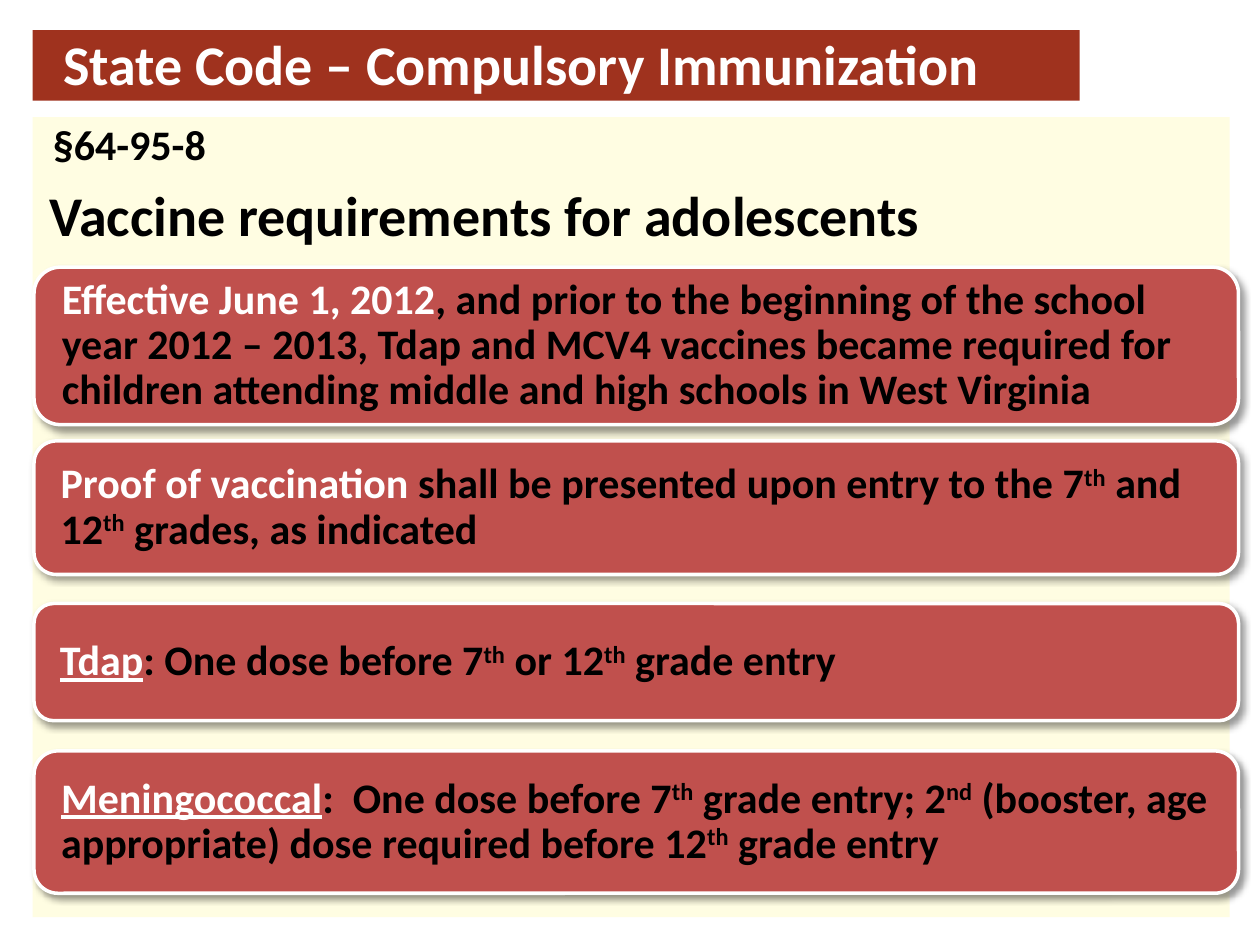
from dataclasses import dataclass

import pptx
import pptx.dml.color
import pptx.enum.shapes
import pptx.enum.text
import pptx.oxml
import pptx.oxml.ns
import pptx.util

COLORS = {
    "panel": "FFFDE2",
    "banner": "9F321E",
    "card": "C0504D",
    "light": "FFFFFF",
    "dark": "000000",
}
FONT = "Calibri"
WIDTH, HEIGHT = pptx.util.Inches(10), pptx.util.Inches(7.5)
SHAPES = pptx.enum.shapes.MSO_SHAPE

CARD_LEFT, CARD_WIDTH = 0.027, 0.956
CARD_SHADOW = (
    f'<a:effectLst {pptx.oxml.ns.nsdecls("a")}>'
    '<a:outerShdw blurRad="50800" dist="38100" dir="2700000" rotWithShape="0">'
    '<a:srgbClr val="000000"><a:alpha val="40000"/></a:srgbClr>'
    "</a:outerShdw></a:effectLst>"
)


@dataclass
class Requirement:
    """One card; top and height are shares of the slide, ^ encloses superscripts."""
    top: float
    height: float
    lead: str
    detail: str
    underlined: bool = False


REQUIREMENTS = [
    Requirement(2.12 / 7.5, 1.25 / 7.5, "Effective June 1, 2012",
                ", and prior to the beginning of the school year 2012 – 2013, "
                "Tdap and MCV4 vaccines became required for children attending "
                "middle and high schools in West Virginia"),
    Requirement(3.5 / 7.5, 1.06 / 7.5, "Proof of vaccination ",
                "shall be presented upon entry to the 7^th^ and 12^th^ grades, "
                "as indicated"),
    Requirement(4.79 / 7.5, 0.93 / 7.5, "Tdap",
                ": One dose before 7^th^ or 12^th^ grade entry", True),
    Requirement(5.96 / 7.5, 1.13 / 7.5, "Meningococcal",
                ":  One dose before 7^th^ grade entry; 2^nd^ (booster, age "
                "appropriate) dose required before 12^th^ grade entry", True),
]


def rgb(name: str) -> pptx.dml.color.RGBColor:
    return pptx.dml.color.RGBColor.from_string(COLORS[name])


def area(left: float, top: float, width: float, height: float) -> tuple:
    """Turn shares of the slide into lengths."""
    return (round(left * WIDTH), round(top * HEIGHT),
            round(width * WIDTH), round(height * HEIGHT))


def add_block(slide, kind, place: tuple, color: str):
    block = slide.shapes.add_shape(kind, *place)
    block.shadow.inherit = False
    block.fill.solid()
    block.fill.fore_color.rgb = rgb(color)
    block.line.fill.background()
    return block


def set_frame(frame, anchor, side: float = 0, edge: float = 0) -> None:
    frame.word_wrap = True
    frame.auto_size = pptx.enum.text.MSO_AUTO_SIZE.NONE
    frame.vertical_anchor = anchor
    frame.margin_left = frame.margin_right = pptx.util.Inches(side)
    frame.margin_top = frame.margin_bottom = pptx.util.Inches(edge)


def set_paragraph(paragraph, size: float, color: str) -> None:
    paragraph.alignment = pptx.enum.text.PP_ALIGN.LEFT
    paragraph.font.name = FONT
    paragraph.font.size = pptx.util.Pt(size)
    paragraph.font.bold = True
    paragraph.font.color.rgb = rgb(color)


def add_requirement(slide, requirement: Requirement) -> None:
    card = add_block(
        slide, SHAPES.ROUNDED_RECTANGLE,
        area(CARD_LEFT, requirement.top, CARD_WIDTH, requirement.height), "card")
    card.line.color.rgb = rgb("light")
    card.line.width = pptx.util.Pt(2)
    properties = card._element.spPr
    properties.remove(properties.find(pptx.oxml.ns.qn("a:effectLst")))
    properties.append(pptx.oxml.parse_xml(CARD_SHADOW))

    set_frame(card.text_frame, pptx.enum.text.MSO_ANCHOR.MIDDLE, 0.16, 0.1)
    paragraph = card.text_frame.paragraphs[0]
    set_paragraph(paragraph, 24, "dark")
    paragraph.line_spacing = 0.9
    lead = paragraph.add_run()
    lead.text = requirement.lead
    lead.font.color.rgb = rgb("light")
    if requirement.underlined:
        lead.font.underline = True
    for index, piece in enumerate(requirement.detail.split("^")):
        run = paragraph.add_run()
        run.text = piece
        if index % 2:
            run._r.get_or_add_rPr().set("baseline", "30000")


def add_title(slide) -> None:
    title = slide.shapes.title
    title.left, title.top, title.width, title.height = area(
        0.05, 0.25 / 7.5, 0.803, 0.5 / 7.5)
    title.text_frame.text = "State Code – Compulsory Immunization"
    set_frame(title.text_frame, pptx.enum.text.MSO_ANCHOR.MIDDLE)
    set_paragraph(title.text_frame.paragraphs[0], 32, "light")
    slide.shapes._spTree.append(title._element)  # bring in front of the banner


def add_heading(slide) -> None:
    heading = slide.shapes.add_textbox(*area(0.039, 0.94 / 7.5, 0.94, 1.1 / 7.5))
    frame = heading.text_frame
    set_frame(frame, pptx.enum.text.MSO_ANCHOR.TOP)
    section, subject = frame.paragraphs[0], frame.add_paragraph()
    section.text = "§64-95-8"
    section._p.get_or_add_pPr().set("marL", str(pptx.util.Inches(0.03)))
    set_paragraph(section, 24, "dark")
    subject.text = "Vaccine requirements for adolescents"
    subject.space_before = pptx.util.Pt(6.4)
    set_paragraph(subject, 32, "dark")


def main() -> None:
    deck = pptx.Presentation()
    deck.slide_width, deck.slide_height = WIDTH, HEIGHT
    slide = deck.slides.add_slide(deck.slide_layouts.get_by_name("Title Only"))
    add_block(slide, SHAPES.RECTANGLE,
              area(0.026, 0.93 / 7.5, 0.95, 6.35 / 7.5), "panel")
    add_block(slide, SHAPES.RECTANGLE,
              area(0.026, 0.24 / 7.5, 0.831, 0.56 / 7.5), "banner")
    add_title(slide)
    add_heading(slide)
    for requirement in REQUIREMENTS:
        add_requirement(slide, requirement)
    deck.save("out.pptx")


if __name__ == "__main__":
    main()
